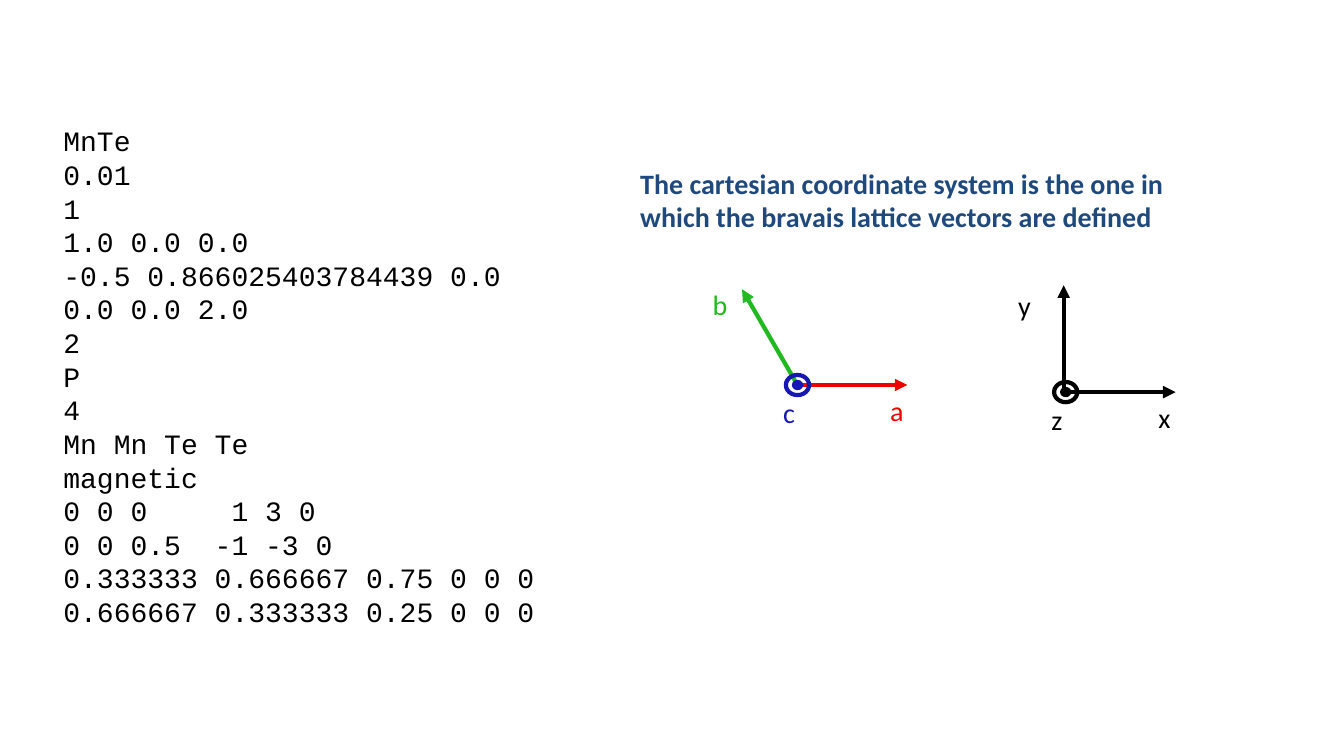
import pptx
import pptx.util
import pptx.dml.color
import pptx.enum.shapes
import pptx.enum.text
import pptx.oxml.ns
from dataclasses import dataclass
from lxml import etree

Inches = pptx.util.Inches
Pt = pptx.util.Pt


@dataclass(frozen=True)
class Theme:
    sans: str = "Calibri"
    mono: str = "Courier New"
    size: int = 20
    lead: int = 24
    stroke: int = 3
    navy: str = "1F497D"
    black: str = "000000"
    red: str = "EE0000"
    green: str = "20B920"
    blue: str = "1717B2"


THEME = Theme()

LISTING = """MnTe
0.01
1
1.0 0.0 0.0
-0.5 0.866025403784439 0.0
0.0 0.0 2.0
2
P
4
Mn Mn Te Te
magnetic
0 0 0     1 3 0
0 0 0.5  -1 -3 0
0.333333 0.666667 0.75 0 0 0
0.666667 0.333333 0.25 0 0 0"""

HEADING = ("The cartesian coordinate system is the one in "
           "which the bravais lattice vectors are defined")


def rgb(color):
    return pptx.dml.color.RGBColor.from_string(color)


def style(frame, color, face=THEME.sans, bold=False):
    frame.word_wrap = True
    frame.auto_size = pptx.enum.text.MSO_AUTO_SIZE.NONE
    frame.vertical_anchor = pptx.enum.text.MSO_ANCHOR.TOP
    for para in frame.paragraphs:
        para.alignment = pptx.enum.text.PP_ALIGN.LEFT
        for run in para.runs:
            run.font.name = face
            run.font.size = Pt(THEME.size)
            run.font.bold = bold
            run.font.color.rgb = rgb(color)


def add_title(slide, text, left, top, width, height):
    title = slide.shapes.title
    title.left, title.top = Inches(left), Inches(top)
    title.width, title.height = Inches(width), Inches(height)
    title.text_frame.text = text
    style(title.text_frame, THEME.navy, bold=True)


def add_text(shapes, text, left, top, width, height, color, face=THEME.sans):
    box = shapes.add_textbox(Inches(left), Inches(top), Inches(width), Inches(height))
    box.text_frame.text = text
    style(box.text_frame, color, face)
    return box


def add_arrow(shapes, start, end, color):
    kind = pptx.enum.shapes.MSO_CONNECTOR.STRAIGHT
    ends = [Inches(value) for value in (*start, *end)]
    arrow = shapes.add_connector(kind, *ends)
    arrow.line.color.rgb = rgb(color)
    arrow.line.width = Pt(THEME.stroke)
    # Arrowhead at the tip, no shadow
    qn = pptx.oxml.ns.qn
    etree.SubElement(arrow.line._get_or_add_ln(), qn("a:tailEnd"), type="triangle")
    etree.SubElement(arrow._element.spPr, qn("a:effectLst"))


def add_ring(shapes, x, y, width, height, color, solid=False):
    kind = pptx.enum.shapes.MSO_SHAPE.OVAL
    ring = shapes.add_shape(kind, Inches(x - width / 2), Inches(y - height / 2),
                            Inches(width), Inches(height))
    ring.shadow.inherit = False
    ring.line.color.rgb = rgb(color)
    ring.line.width = Pt(THEME.stroke)
    if solid:
        ring.fill.solid()
        ring.fill.fore_color.rgb = rgb(color)
    else:
        ring.fill.background()


def add_axes(slide, x, y, names, colors, foot, tip, tag):
    """Draw three axes; foot, tip and tag place the second one from the origin."""
    shapes = slide.shapes.add_group_shape().shapes
    first, second, out = colors
    # Axes in the plane
    add_arrow(shapes, (x, y), (x + 1.09, y), first)
    add_arrow(shapes, (x + foot[0], y + foot[1]), (x + tip[0], y + tip[1]), second)
    # Axis pointing out of the plane
    add_ring(shapes, x, y, 0.23, 0.2, out)
    add_ring(shapes, x, y, 0.07, 0.06, out, solid=True)
    # Axis names
    tags = ((0.82, 0.03), tag, (-0.24, 0.05))
    for name, color, (dx, dy) in zip(names, colors, tags):
        add_text(shapes, name, x + dx, y + dy, 0.54, 0.44, color)


def main():
    deck = pptx.Presentation()
    deck.slide_width, deck.slide_height = Inches(13.33), Inches(7.5)
    slide = deck.slides.add_slide(deck.slide_layouts.get_by_name("Title Only"))

    # Input file on the left
    code = add_text(slide.shapes, LISTING, 0.53, 1.18, 4.94, 5.15,
                    THEME.black, THEME.mono)
    for para in code.text_frame.paragraphs:
        para.line_spacing = Pt(THEME.lead)

    # Statement on the right
    add_title(slide, HEADING, 6.25, 1.6, 5.67, 0.77)

    # Lattice vectors and cartesian axes
    add_axes(slide, 7.91, 3.82, "abc", (THEME.red, THEME.green, THEME.blue),
             foot=(0, 0), tip=(-0.55, -0.95), tag=(-0.94, -1.02))
    add_axes(slide, 10.57, 3.89, "xyz", (THEME.black,) * 3,
             foot=(-0.02, 0.03), tip=(-0.02, -1.06), tag=(-0.57, -1.08))

    deck.save("out.pptx")


if __name__ == "__main__":
    main()
